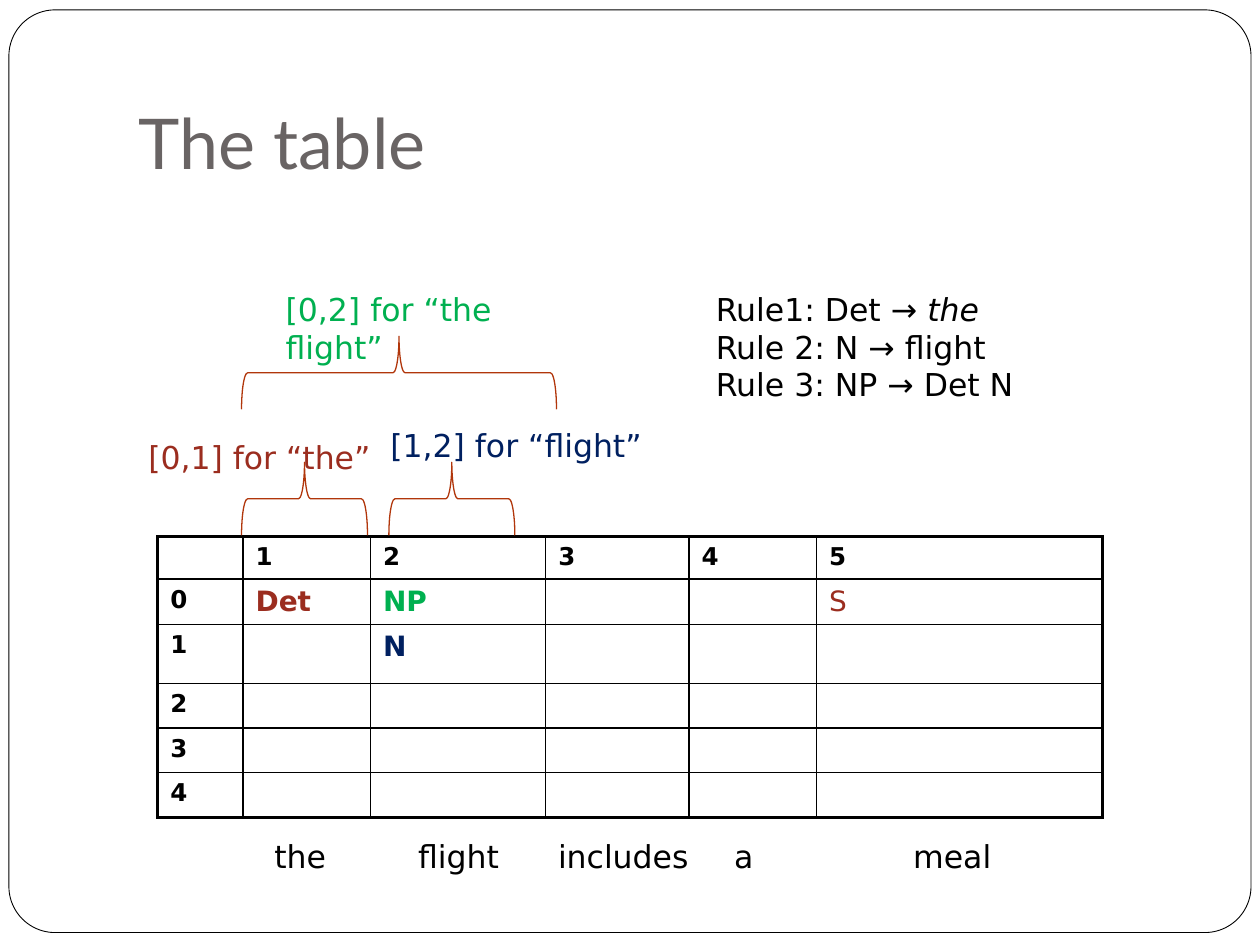
from dataclasses import dataclass

from lxml import etree
from pptx import Presentation
from pptx.dml.color import RGBColor
from pptx.enum.shapes import MSO_SHAPE
from pptx.enum.text import MSO_ANCHOR, MSO_AUTO_SIZE, PP_ALIGN
from pptx.oxml.ns import qn
from pptx.util import Cm, Pt

ROUNDED = MSO_SHAPE.ROUNDED_RECTANGLE
BRACE = MSO_SHAPE.RIGHT_BRACE
BOTTOM = MSO_ANCHOR.BOTTOM
LEFT = PP_ALIGN.LEFT
NO_FIT = MSO_AUTO_SIZE.NONE
GROW = MSO_AUTO_SIZE.SHAPE_TO_FIT_TEXT


@dataclass(frozen=True)
class Theme:
    black: str = "000000"
    white: str = "FFFFFF"
    grey: str = "696464"
    red: str = "9B2D1F"
    green: str = "00B050"
    navy: str = "002060"
    brace: str = "B1360B"
    title_font: str = "Lato"
    body_font: str = "DejaVu Sans"
    title_size: int = 40
    body_size: int = 18
    entry_size: int = 16
    head_size: int = 14
    outer_line: float = 2.25
    inner_line: float = 1


theme = Theme()


def style(paragraph, size, color, name=theme.body_font, bold=False):
    for span in paragraph.runs:
        span.font.name = name
        span.font.size = Pt(size)
        span.font.bold = bold
        span.font.color.rgb = RGBColor.from_string(color)


def add_label(left, top, width, height, text, color=theme.black, wrap=True):
    box = page.shapes.add_textbox(Cm(left), Cm(top), Cm(width), Cm(height))
    box.text_frame.word_wrap = wrap
    box.text_frame.auto_size = GROW
    box.text_frame.text = text
    for para in box.text_frame.paragraphs:
        style(para, theme.body_size, color)
    return box


deck = Presentation()
deck.slide_width, deck.slide_height = Cm(25.4), Cm(19.05)
page = deck.slides.add_slide(deck.slide_layouts[5])

frame = page.shapes.add_shape(ROUNDED, Cm(0.18), Cm(0.2), Cm(25.04), Cm(18.6))
frame.adjustments[0] = 0.05
frame.shadow.inherit = False
frame.fill.solid()
frame.fill.fore_color.rgb = RGBColor.from_string(theme.white)
frame.line.color.rgb = RGBColor.from_string(theme.black)
frame.line.width = Pt(0.5)

title = page.shapes.title
page.shapes._spTree.append(title._element)
title.left, title.top, title.width, title.height = Cm(2.54), Cm(0.76), Cm(21.59), Cm(3.18)
title.text_frame.text = "The table"
title.text_frame.auto_size = NO_FIT
title.text_frame.vertical_anchor = BOTTOM
title.text_frame.margin_bottom = Cm(0.25)
title.text_frame.paragraphs[0].alignment = LEFT
style(title.text_frame.paragraphs[0], theme.title_size, theme.grey, theme.title_font)

column_widths = [1.72, 2.57, 3.53, 2.89, 2.57, 5.77]
row_heights = [0.82, 0.91, 1.19, 0.9, 0.9, 0.9]
entries = {
    (1, 1): ("Det", theme.red, True),
    (1, 2): ("NP", theme.green, True),
    (1, 5): ("S", theme.red, False),
    (2, 2): ("N", theme.navy, True),
}
row_count, column_count = len(row_heights), len(column_widths)
chart = page.shapes.add_table(
    row_count, column_count, Cm(3.18), Cm(10.82), Cm(sum(column_widths)), Cm(sum(row_heights))
).table
chart.first_row = chart.horz_banding = False
for column, width in zip(chart.columns, column_widths):
    column.width = Cm(width)
for row, height in zip(chart.rows, row_heights):
    row.height = Cm(height)

for r in range(row_count):
    for c in range(column_count):
        cell = chart.cell(r, c)
        para = cell.text_frame.paragraphs[0]
        if (r, c) in entries:
            text, color, bold = entries[r, c]
            para.text = text
            style(para, theme.entry_size, color, bold=bold)
        elif (r == 0) != (c == 0):
            para.text = str(c if r == 0 else r - 1)
            style(para, theme.head_size, theme.black, bold=True)
        else:
            para._p.get_or_add_endParaRPr().set("sz", str(theme.head_size * 100))
        outer_edges = {
            "a:lnL": c == 0,
            "a:lnR": c == column_count - 1,
            "a:lnT": r == 0,
            "a:lnB": r == row_count - 1,
        }
        properties = cell._tc.get_or_add_tcPr()
        for tag, outer in outer_edges.items():
            width = Pt(theme.outer_line if outer else theme.inner_line)
            border = etree.SubElement(properties, qn(tag), w=str(int(width)))
            fill = etree.SubElement(border, qn("a:solidFill"))
            etree.SubElement(fill, qn("a:srgbClr"), val=theme.black)
        cell.fill.background()

words = [
    ("the", 5.28, 1.55),
    ("flight", 8.18, 2.16),
    ("includes", 11, 3.2),
    ("a", 14.55, 0.89),
    ("meal", 18.16, 2.08),
]
for word, left, width in words:
    add_label(left, 16.75, width, 1.02, word, wrap=False)

brace_depth = 1.47
spans = [
    ((4.87, 9.32, 2.54), (2.74, 8.71, 5.72, 1.02), "[0,1] for “the”", theme.red),
    ((4.87, 6.78, 6.35), (5.51, 5.72, 5.08, 1.8), "[0,2] for “the flight”", theme.green),
    ((7.84, 9.32, 2.54), (7.62, 8.46, 5.72, 1.02), "[1,2] for “flight”", theme.navy),
]
for (left, top, width), label_place, text, color in spans:
    shift = (width - brace_depth) / 2
    brace = page.shapes.add_shape(
        BRACE, Cm(left + shift), Cm(top - shift), Cm(brace_depth), Cm(width)
    )
    brace.rotation = 270
    brace.shadow.inherit = False
    brace.fill.background()
    brace.line.color.rgb = RGBColor.from_string(theme.brace)
    brace.line.width = Pt(0.75)
    add_label(*label_place, text, color)

rules = add_label(
    14.18, 5.72, 7.42, 2.57, "Rule1: Det → \nRule 2: N → flight\nRule 3: NP → Det N"
)
first_rule = rules.text_frame.paragraphs[0]
terminal = first_rule.add_run()
terminal.text = "the"
style(first_rule, theme.body_size, theme.black)
terminal.font.italic = True

deck.save("out.pptx")
